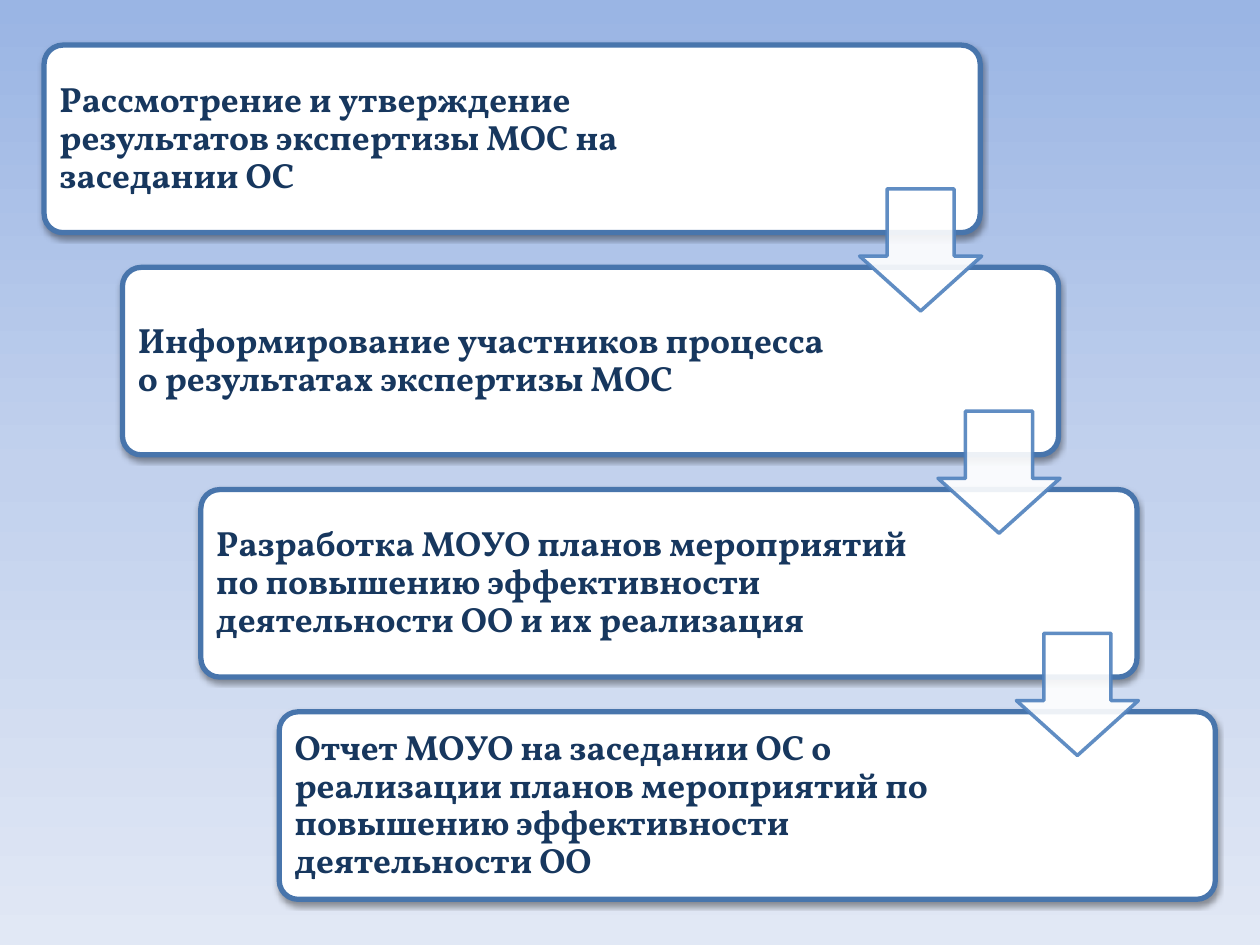
import pptx
import pptx.util
import pptx.dml.color
import pptx.enum.shapes
import pptx.enum.text
import pptx.oxml.ns
from lxml import etree
from pptx.util import Cm, Pt

qn = pptx.oxml.ns.qn
RGB = pptx.dml.color.RGBColor.from_string
SHAPE = pptx.enum.shapes.MSO_SHAPE


class Theme:
    sky = ((0, "9AB5E4"), (50, "C2D1ED"), (100, "E1E8F5"))
    white, border, arrow, ink, shadow = "FFFFFF", "4875AC", "4F81BD", "17375E", "000000"
    font, size = "Vollkorn", Pt(20)
    border_width, arrow_width = Pt(3), Pt(2)


STEPS = (
    "Рассмотрение и утверждение результатов экспертизы МОС на заседании ОС",
    "Информирование участников процесса о результатах экспертизы МОС",
    "Разработка МОУО планов мероприятий по повышению эффективности деятельности ОО и их реализация",
    "Отчет МОУО на заседании ОС о реализации планов мероприятий по повышению эффективности деятельности ОО",
)


def apply(obj, formats):
    for name, value in formats.items():
        setattr(obj, name, value)


def add_color(parent, color, alpha=100):
    clr = etree.SubElement(parent, qn("a:srgbClr"), val=color)
    if alpha < 100:
        etree.SubElement(clr, qn("a:alpha"), val=str(alpha * 1000))


def paint_background(s):
    fill = s.background.fill
    fill.gradient()
    fill.gradient_angle = 270
    stops = next(s.element.iter(qn("a:gsLst")))
    for stop in list(stops):
        stops.remove(stop)
    for pos, color in Theme.sky:
        add_color(etree.SubElement(stops, qn("a:gs"), pos=str(pos * 1000)), color)


def add_outline_shape(s, kind, box, adjustments, line, width):
    sp = s.shapes.add_shape(kind, *box)
    for i, value in enumerate(adjustments):
        sp.adjustments[i] = value
    sp.shadow.inherit = False
    sp.fill.solid()
    sp.fill.fore_color.rgb = RGB(Theme.white)
    sp.line.color.rgb = RGB(line)
    sp.line.width = width
    return sp


def add_step(s, box, text):
    left, top, width, height = box
    # Card with a soft shadow
    card = add_outline_shape(s, SHAPE.ROUNDED_RECTANGLE, box, (0.1,),
                             Theme.border, Theme.border_width)
    effects = card.element.spPr.find(qn("a:effectLst"))
    shadow = etree.SubElement(effects, qn("a:outerShdw"), blurRad=str(Pt(3.1)),
                              dist=str(Pt(1.6)), dir="5400000", rotWithShape="0")
    add_color(shadow, Theme.shadow, 38)

    # Text keeps clear of the arrows on the right
    pad = Cm(0.11)
    tf = s.shapes.add_textbox(left + pad, top + pad, Cm(14.6), height - 2 * pad).text_frame
    margins = dict.fromkeys(("margin_left", "margin_top", "margin_right", "margin_bottom"), Cm(0.2))
    apply(tf, {"word_wrap": True, "vertical_anchor": pptx.enum.text.MSO_ANCHOR.MIDDLE, **margins})
    p = tf.paragraphs[0]
    p.line_spacing = 0.9
    r = p.add_run()
    r.text = text
    apply(r.font, {"name": Theme.font, "size": Theme.size, "bold": True})
    r.font.color.rgb = RGB(Theme.ink)


def add_step_arrow(s, box):
    left, top = box[:2]
    side = Cm(2.46)
    arrow = add_outline_shape(s, SHAPE.DOWN_ARROW,
                              (left + Cm(16.44), top + Cm(2.9), side, side),
                              (0.45, 0.55), Theme.arrow, Theme.arrow_width)
    # Adjustments: head length first, then shaft width
    arrow.adjustments[0], arrow.adjustments[1] = 0.55, 0.45
    for clr in arrow.element.spPr.iter(qn("a:srgbClr")):
        etree.SubElement(clr, qn("a:alpha"), val="90000")


def add_staircase(s, left, top):
    boxes = [(left + i * Cm(1.58), top + i * Cm(4.48), Cm(18.87), Cm(3.78))
             for i in range(len(STEPS))]
    for box, text in zip(boxes, STEPS):
        add_step(s, box, text)
    for box in boxes[:-1]:
        add_step_arrow(s, box)


def main():
    prs = pptx.Presentation()
    apply(prs, {"slide_width": Cm(25.4), "slide_height": Cm(19.05)})
    s = prs.slides.add_slide(prs.slide_layouts[6])
    paint_background(s)
    add_staircase(s, Cm(0.89), Cm(0.91))
    prs.save("out.pptx")


if __name__ == "__main__":
    main()
